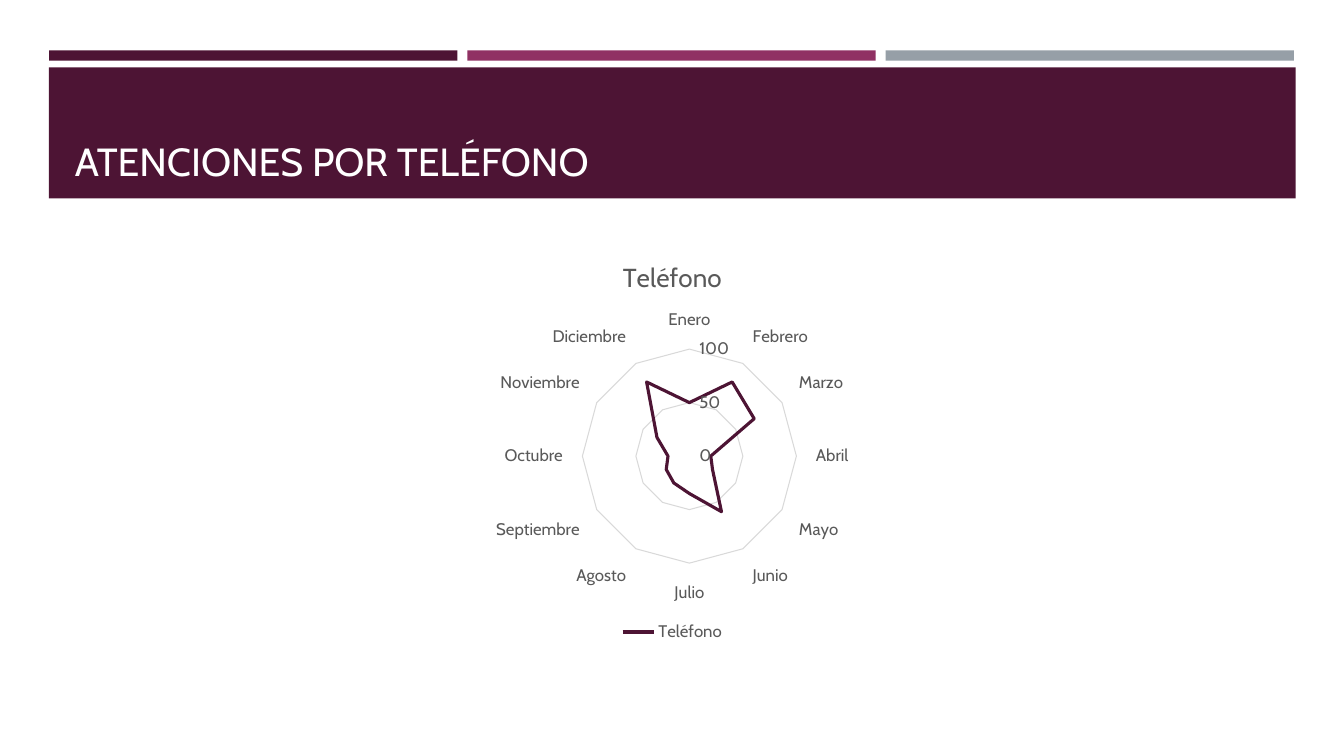
from dataclasses import dataclass

from pptx import Presentation
from pptx.chart.data import CategoryChartData as Data
from pptx.dml.color import RGBColor as Rgb
from pptx.enum.chart import XL_CHART_TYPE as Kind, XL_LEGEND_POSITION as Side
from pptx.enum.chart import XL_TICK_MARK as Tick
from pptx.enum.shapes import MSO_SHAPE as Form
from pptx.enum.text import MSO_ANCHOR as Anchor, MSO_AUTO_SIZE as Fit, PP_ALIGN as Align
from pptx.util import Cm, Pt


@dataclass(frozen=True)
class Theme:
    face: str = "Cabin"
    plum: str = "4D1434"
    rose: str = "903163"
    steel: str = "969FA7"
    white: str = "FFFFFF"
    text: str = "595959"
    grid: str = "D9D9D9"
    head: float = 28
    name: float = 18.6
    label: float = 12
    thin: float = 0.75
    thick: float = 2.25


LOOK = Theme()
CALLS = {
    "Enero": 50, "Febrero": 80, "Marzo": 70, "Abril": 20,
    "Mayo": 25, "Junio": 60, "Julio": 35, "Agosto": 29,
    "Septiembre": 25, "Octubre": 20, "Noviembre": 35, "Diciembre": 80,
}


def apply(item, values):
    for key, value in values.items():
        setattr(item, key, value)


def style(font, size, color):
    apply(font, {"name": LOOK.face, "size": Pt(size), "bold": False})
    font.color.rgb = Rgb.from_string(color)


def stroke(line, color, width):
    line.color.rgb = Rgb.from_string(color)
    line.width = Pt(width)


def place(item, left, top, width, height):
    apply(item, {"left": Cm(left), "top": Cm(top),
                 "width": Cm(width), "height": Cm(height)})


def block(slide, color, left, top, width, height):
    box = slide.shapes.add_shape(
        Form.RECTANGLE, Cm(left), Cm(top), Cm(width), Cm(height))
    box.shadow.inherit = False
    box.fill.solid()
    box.fill.fore_color.rgb = Rgb.from_string(color)
    box.line.fill.background()


def heading(slide, text):
    title = slide.shapes.title
    place(title, 1.63, 1.96, 30.63, 2.82)
    frame = title.text_frame
    frame.text = text
    apply(frame, {"vertical_anchor": Anchor.BOTTOM, "word_wrap": True,
                  "auto_size": Fit.NONE})
    para = frame.paragraphs[0]
    para.alignment = Align.LEFT
    style(para.runs[0].font, LOOK.head, LOOK.white)
    slide.shapes._spTree.append(title._element)


def radar(slide, name, months):
    data = Data()
    data.categories = list(months)
    data.add_series(name, list(months.values()))
    chart = slide.shapes.add_chart(
        Kind.RADAR, Cm(1.63), Cm(6.07), Cm(30.63), Cm(10.21), data).chart
    style(chart.font, LOOK.label, LOOK.text)
    apply(chart, {"has_title": True, "has_legend": True})
    frame = chart.chart_title.text_frame
    frame.text = name
    style(frame.paragraphs[0].runs[0].font, LOOK.name, LOOK.text)
    apply(chart.legend, {"position": Side.BOTTOM, "include_in_layout": False})
    style(chart.legend.font, LOOK.label, LOOK.text)
    for axis in (chart.category_axis, chart.value_axis):
        apply(axis, {"has_major_gridlines": True,
                     "major_tick_mark": Tick.OUTSIDE,
                     "minor_tick_mark": Tick.NONE})
        style(axis.tick_labels.font, LOOK.label, LOOK.text)
        stroke(axis.major_gridlines.format.line, LOOK.grid, LOOK.thin)
    stroke(chart.category_axis.format.line, LOOK.grid, LOOK.thin)
    scale = chart.value_axis
    apply(scale, {"minimum_scale": 0, "maximum_scale": 100, "major_unit": 50})
    scale.format.line.fill.background()
    plot = chart.plots[0]
    plot.vary_by_categories = False
    stroke(plot.series[0].format.line, LOOK.plum, LOOK.thick)


def main():
    deck = Presentation()
    apply(deck, {"slide_width": Cm(33.87), "slide_height": Cm(19.05)})
    slide = deck.slides.add_slide(deck.slide_layouts[5])
    for i, color in enumerate((LOOK.plum, LOOK.rose, LOOK.steel)):
        block(slide, color, 1.24 + i * 10.54, 1.27, 10.29, 0.26)
    block(slide, LOOK.plum, 1.23, 1.7, 31.42, 3.3)
    heading(slide, "ATENCIONES POR TELÉFONO")
    radar(slide, "Teléfono", CALLS)
    deck.save("out.pptx")


if __name__ == "__main__":
    main()
